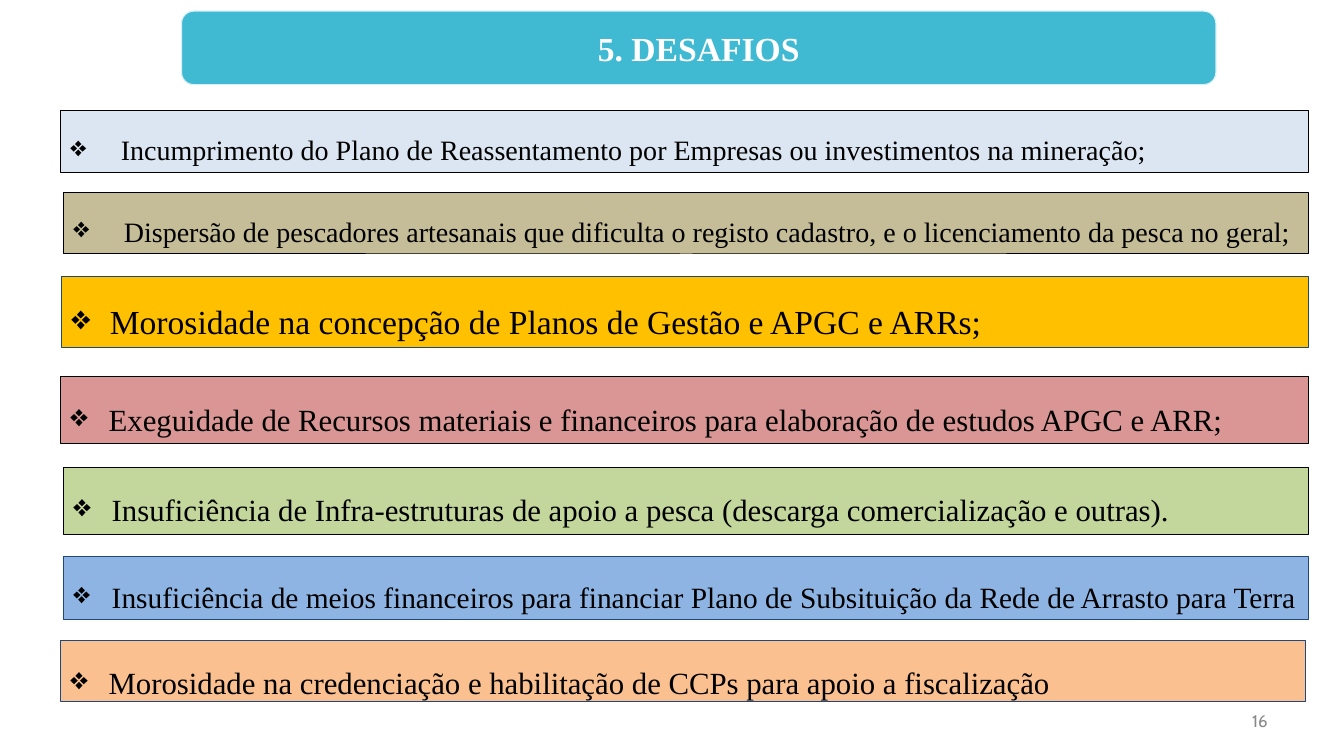
from dataclasses import dataclass

from lxml.etree import SubElement
from pptx import Presentation
from pptx.dml.color import RGBColor
from pptx.enum.shapes import MSO_SHAPE
from pptx.enum.text import MSO_ANCHOR, MSO_AUTO_SIZE, PP_ALIGN
from pptx.oxml.ns import qn
from pptx.shapes.autoshape import Shape
from pptx.slide import Slide
from pptx.util import Inches, Pt

WIDE, HIGH = Inches(13.33), Inches(7.5)


@dataclass(frozen=True)
class Theme:
    serif: str = "Times New Roman"
    sans: str = "Cabin"
    ink: str = "000000"
    navy: str = "1F497D"
    white: str = "FFFFFF"
    gray: str = "898989"
    teal: str = "40BAD2"
    pale: str = "D9F1F6"
    ice: str = "DCE6F2"
    sand: str = "C4BD97"
    gold: str = "FFC000"
    rose: str = "D99694"
    green: str = "C3D69B"
    blue: str = "8EB4E3"
    peach: str = "FAC090"
    small: float = 12
    body: float = 20
    mid: float = 21
    large: float = 22
    head: float = 24


@dataclass(frozen=True)
class Box:
    """Place and size in percent of the slide."""
    left: float
    top: float
    width: float
    height: float

    def frame(self) -> tuple[int, int, int, int]:
        return (int(WIDE * self.left / 100), int(HIGH * self.top / 100),
                int(WIDE * self.width / 100), int(HIGH * self.height / 100))


@dataclass(frozen=True)
class Bar:
    text: str
    box: Box
    fill: str
    line: str
    size: float
    indent: float = 0.38
    align: PP_ALIGN = PP_ALIGN.JUSTIFY


T = Theme()
LEFT = PP_ALIGN.LEFT
BARS = [
    Bar("Incumprimento do Plano de Reassentamento por Empresas ou investimentos na mineração;",
        Box(4.5, 14.67, 92.87, 8.13), T.ice, T.ink, T.body, 0.5),
    Bar("Dispersão de pescadores artesanais que dificulta o registo cadastro, "
        "e o licenciamento da pesca no geral;",
        Box(4.73, 25.47, 92.65, 8.13), T.sand, T.ink, T.body, 0.5),
    Bar("Morosidade na concepção de Planos de Gestão e APGC e ARRs;",
        Box(4.58, 36.53, 92.8, 9.47), T.gold, T.navy, T.head, align=LEFT),
    Bar("Exeguidade de Recursos materiais e financeiros para elaboração de estudos APGC e ARR;",
        Box(4.5, 49.87, 92.87, 8.8), T.rose, T.ink, T.large),
    Bar("Insuficiência de Infra-estruturas de apoio a pesca (descarga comercialização e outras).",
        Box(4.73, 61.87, 92.65, 8.8), T.green, T.ink, T.large),
    Bar("Insuficiência de meios financeiros para financiar Plano de Subsituição "
        "da Rede de Arrasto para Terra",
        Box(4.73, 73.6, 92.65, 8.4), T.blue, T.navy, T.mid, align=LEFT),
    Bar("Morosidade na credenciação e habilitação de CCPs para apoio a fiscalização",
        Box(4.5, 84.67, 92.65, 8.13), T.peach, T.navy, T.large, align=LEFT),
]


def panel(slide: Slide, kind: MSO_SHAPE, box: Box, fill: str, line: str, weight: float) -> Shape:
    shape = slide.shapes.add_shape(kind, *box.frame())
    shape.shadow.inherit = False
    shape.fill.solid()
    shape.fill.fore_color.rgb = RGBColor.from_string(fill)
    shape.line.color.rgb = RGBColor.from_string(line)
    shape.line.width = Pt(weight)
    return shape


def write(shape: Shape, text: str, align: PP_ALIGN, face: str, size: float,
          color: str, bold: bool = False) -> None:
    frame = shape.text_frame
    frame.word_wrap = True
    para = frame.paragraphs[0]
    para.text = text
    para.alignment = align
    font = para.font
    font.name, font.size, font.bold = face, Pt(size), bold
    font.color.rgb = RGBColor.from_string(color)


def bullet(shape: Shape, indent: float) -> None:
    """Give the first paragraph a diamond bullet; call before its font is set."""
    para = shape.text_frame.paragraphs[0]
    para.line_spacing = 1.5
    props = para._p.get_or_add_pPr()
    props.set("marL", str(Inches(indent)))
    props.set("indent", str(-Inches(indent)))
    tint = SubElement(props, qn("a:buClr"))
    SubElement(tint, qn("a:srgbClr"), val=T.ink)
    SubElement(props, qn("a:buChar"), char="❖")


def strip(slide: Slide, bar: Bar) -> None:
    shape = panel(slide, MSO_SHAPE.RECTANGLE, bar.box, bar.fill, bar.line, 0.75)
    shape.text_frame.vertical_anchor = MSO_ANCHOR.TOP
    shape.text_frame.auto_size = MSO_AUTO_SIZE.SHAPE_TO_FIT_TEXT
    bullet(shape, bar.indent)
    write(shape, bar.text, bar.align, T.serif, bar.size, T.ink)


def main() -> None:
    deck = Presentation()
    deck.slide_width, deck.slide_height = WIDE, HIGH
    slide = deck.slides.add_slide(deck.slide_layouts[6])

    title = panel(slide, MSO_SHAPE.ROUNDED_RECTANGLE, Box(13.5, 1.47, 76.97, 9.73),
                  T.teal, T.pale, 0.85)
    title.text_frame.vertical_anchor = MSO_ANCHOR.MIDDLE
    write(title, "5. DESAFIOS", PP_ALIGN.CENTER, T.serif, T.head, T.white, True)

    for bar in BARS:
        strip(slide, bar)

    page = slide.shapes.add_textbox(*Box(71.72, 92.67, 23.33, 5.33).frame())
    page.text_frame.vertical_anchor = MSO_ANCHOR.MIDDLE
    write(page, "16", PP_ALIGN.RIGHT, T.sans, T.small, T.gray)

    deck.save("out.pptx")


if __name__ == "__main__":
    main()
